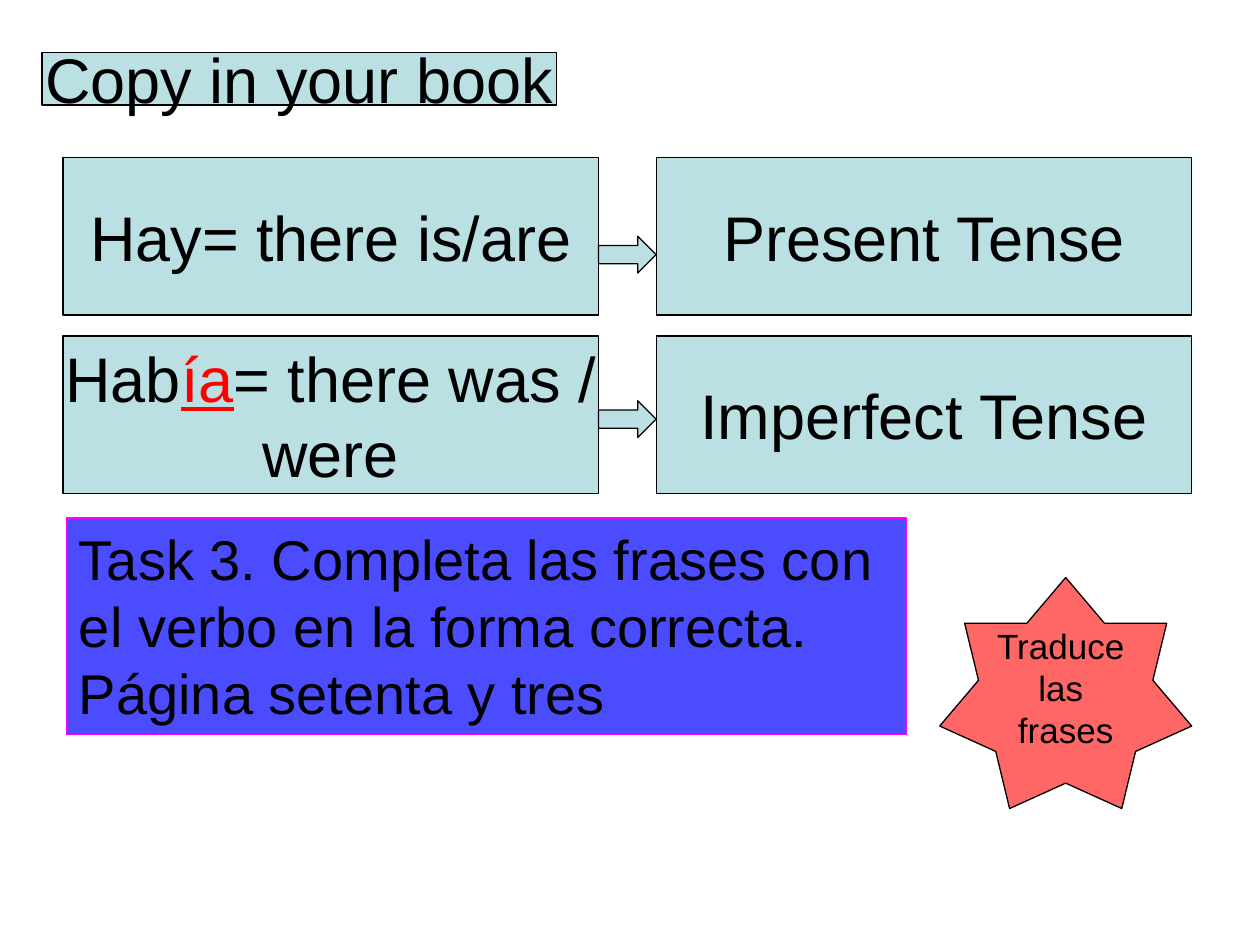
import pptx
import pptx.util
import pptx.dml.color
import pptx.enum.shapes
import pptx.enum.text
import lxml.etree

Pt = pptx.util.Pt
MSO_SHAPE = pptx.enum.shapes.MSO_SHAPE
PP_ALIGN = pptx.enum.text.PP_ALIGN
MSO_ANCHOR = pptx.enum.text.MSO_ANCHOR
PALE, BLACK, RED = "BBE0E3", "000000", "FF0000"


def rgb(value):
    """Turn a hex string into a colour."""
    return pptx.dml.color.RGBColor.from_string(value)


def add_box(s, kind, box, fill=PALE, line=BLACK, opacity=100):
    """Add an outlined preset shape, see-through if opacity is below 100."""
    sp = s.shapes.add_shape(kind, *(Pt(v) for v in box))
    sp.shadow.inherit = False
    sp.fill.solid()
    sp.fill.fore_color.rgb = rgb(fill)
    sp.line.color.rgb = rgb(line)
    sp.line.width = Pt(0.75)
    if opacity < 100:
        clr = sp.fill._xPr.find(".//" + pptx.oxml.ns.qn("a:srgbClr"))
        alpha = lxml.etree.SubElement(clr, pptx.oxml.ns.qn("a:alpha"))
        alpha.set("val", str(opacity * 1000))
    return sp


def write(sp, paragraphs, size, align=PP_ALIGN.CENTER, anchor=MSO_ANCHOR.MIDDLE, wrap=False):
    """Write paragraphs, each a list of runs; every second run is stressed."""
    tf = sp.text_frame
    tf.word_wrap = wrap
    tf.vertical_anchor = anchor
    for i, runs in enumerate(paragraphs):
        p = tf.add_paragraph() if i else tf.paragraphs[0]
        p.alignment = align
        p.font.size = Pt(size)
        p.font.name = "Arial"
        p.font.color.rgb = rgb(BLACK)
        for j, text in enumerate(runs):
            r = p.add_run()
            r.text = text
            r.font.color.rgb = rgb(RED if j % 2 else BLACK)
            if j % 2:
                r.font.underline = True


def add_title(s, box):
    """Add the heading."""
    write(add_box(s, MSO_SHAPE.RECTANGLE, box), [["Copy in your book"]], 36)


def add_tense_row(s, box, verb, tense, arrow_dy):
    """Add a verb box and a tense box joined by a block arrow."""
    x, y, w, h = box
    gap = 33
    cell_w = (w - gap) / 2
    for cell_x, text in ((x, verb), (x + cell_w + gap, [[tense]])):
        write(add_box(s, MSO_SHAPE.RECTANGLE, (cell_x, y, cell_w, h)), text, 36)
    add_box(s, MSO_SHAPE.RIGHT_ARROW, (x + cell_w, y + arrow_dy, gap, 21))


def add_task(s, box):
    """Add the task panel."""
    sp = add_box(s, MSO_SHAPE.RECTANGLE, box, "0000FF", "FF00FF", 70)
    text = "Task 3. Completa las frases con el verbo en la forma correcta. Página setenta y tres"
    write(sp, [[text]], 32, PP_ALIGN.LEFT, MSO_ANCHOR.TOP, True)
    sp.text_frame.auto_size = pptx.enum.text.MSO_AUTO_SIZE.SHAPE_TO_FIT_TEXT


def add_star(s, box):
    """Add the seven-pointed star."""
    sp = add_box(s, MSO_SHAPE.STAR_7_POINT, box, RED, BLACK, 60)
    write(sp, [["Traduce "], ["las "], ["frases"]], 20)


def main():
    """Build and save the slide."""
    prs = pptx.Presentation()
    prs.slide_width, prs.slide_height = Pt(720), Pt(540)
    s = prs.slides.add_slide(prs.slide_layouts[6])
    add_task(s, (38, 296, 480, 123.8))
    add_star(s, (537, 330, 144, 132))
    add_tense_row(s, (36, 90, 645, 90), [["Hay= there is/are"]], "Present Tense", 45)
    add_tense_row(s, (36, 192, 645, 90), [["Hab", "ía", "= there was /"], ["were"]],
                  "Imperfect Tense", 37)
    add_title(s, (24, 30, 294, 30))
    prs.save("out.pptx")


if __name__ == "__main__":
    main()
